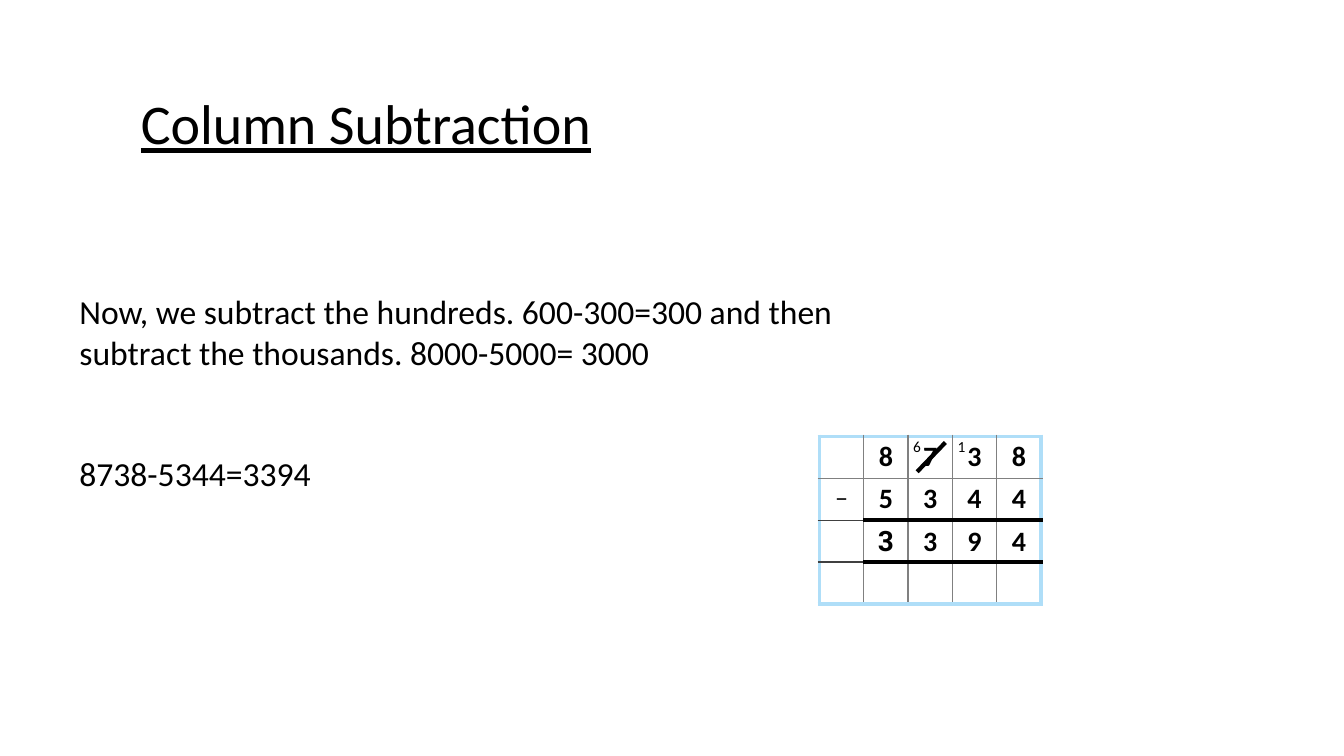
import pptx
import pptx.dml.color
import pptx.enum.shapes
import pptx.enum.text
import pptx.oxml
import pptx.oxml.ns
import pptx.util

PX = 4572  # 200 px to the inch
COLORS = {"ink": "000000", "paper": "FFFFFF", "sky": "AFDEF8",
          "grey": "808080", "dark": "404040"}
COL, ROW = 88, 83
SUM = ["", "8", "7", "3", "8"], ["−", "5", "3", "4", "4"], [""] * 5, [""] * 5
DIGITS = ("3", "Roboto"), ("3", "Calibri"), ("9", "Calibri"), ("4", "Calibri")
CENTER = pptx.enum.text.PP_ALIGN.CENTER


def px(*sizes):
    return [size * PX for size in sizes]


def color(name):
    return pptx.dml.color.RGBColor.from_string(COLORS[name])


def style(par, size, bold=False, face="Calibri", align=CENTER):
    par.alignment = align
    par.font.size = pptx.util.Pt(size)
    par.font.bold = bold
    par.font.name = face
    par.font.color.rgb = color("ink")


def add_text(slide, box, lines, size, gap=0, **look):
    frame = slide.shapes.add_textbox(*px(*box)).text_frame
    frame.word_wrap = True
    frame.text = "\n".join(lines)
    for par in frame.paragraphs:
        style(par, size, **look)
    for par in frame.paragraphs[1:]:
        par.space_before = pptx.util.Pt(gap)


def add_title(slide, box):
    title = slide.shapes.title
    title.left, title.top, title.width, title.height = px(*box)
    frame = title.text_frame
    frame.margin_left = frame.margin_right = 0
    frame.margin_top = frame.margin_bottom = 0
    frame.vertical_anchor = pptx.enum.text.MSO_ANCHOR.TOP
    frame.auto_size = pptx.enum.text.MSO_AUTO_SIZE.NONE
    frame.text = "Column Subtraction"
    style(frame.paragraphs[0], 40)
    frame.paragraphs[0].font.underline = True


def rule_across(edge, col):
    """Colour and points of the horizontal edge, counted from the top."""
    if edge in (0, len(SUM)):
        return "sky", 3
    if edge == 1:
        return "grey", 1
    return ("black" and "ink", 3) if col else ("dark", 1)


def rule_down(edge):
    return ("sky", 3) if edge in (0, len(SUM[0])) else ("grey", 1)


def add_edge(cell, side, rule):
    name, points = rule
    cell.get_or_add_tcPr().append(pptx.oxml.parse_xml(
        f'<a:ln{side} {pptx.oxml.ns.nsdecls("a")} w="{points * 12700}">'
        f'<a:solidFill><a:srgbClr val="{COLORS[name]}"/></a:solidFill>'
        f'</a:ln{side}>'))


def add_grid(slide, box):
    table = slide.shapes.add_table(len(SUM), len(SUM[0]), *px(*box)).table
    table.first_row = table.horz_banding = False
    for col in table.columns:
        col.width = COL * PX
    for r, row in enumerate(SUM):
        table.rows[r].height = ROW * PX
        for c, digit in enumerate(row):
            cell = table.cell(r, c)
            cell.margin_left = cell.margin_right = 0
            cell.margin_top = cell.margin_bottom = 0
            cell.vertical_anchor = pptx.enum.text.MSO_ANCHOR.MIDDLE
            add_edge(cell._tc, "L", rule_down(c))
            add_edge(cell._tc, "R", rule_down(c + 1))
            add_edge(cell._tc, "T", rule_across(r, c))
            add_edge(cell._tc, "B", rule_across(r + 1, c))
            cell.fill.solid()
            cell.fill.fore_color.rgb = color("paper")
            cell.text = digit
            sign = digit == "−"
            style(cell.text_frame.paragraphs[0], 18 if sign else 20, not sign)


def add_strike(slide, box):
    """Cross out a digit from lower left to upper right."""
    left, top, width, height = box
    line = slide.shapes.add_connector(
        pptx.enum.shapes.MSO_CONNECTOR.STRAIGHT,
        *px(left, top + height, left + width, top))
    line.line.color.rgb = color("ink")
    line.line.width = pptx.util.Pt(3)
    line._element.spPr.append(pptx.oxml.parse_xml(
        f'<a:effectLst {pptx.oxml.ns.nsdecls("a")}/>'))


def add_work(slide, box):
    """Place the grid with its answer, carries and crossed-out digit."""
    left, top = box[:2]
    add_grid(slide, box)
    add_strike(slide, (left + 2 * COL + 18, top + 12, 56, 58))
    for col, carry in ((2, "6"), (3, "1")):
        add_text(slide, (left + col * COL - 26, top - 8, COL, 58), [carry], 11)
    for col, (digit, face) in enumerate(DIGITS, 1):
        add_text(slide, (left + col * COL, top + 2 * ROW - 3, COL, 88),
                 [digit], 20, bold=True, face=face)


def main():
    deck = pptx.Presentation()
    deck.slide_width, deck.slide_height = px(2667, 1500)
    slide = deck.slides.add_slide(deck.slide_layouts.get_by_name("Title Only"))
    add_title(slide, (0, 176, 1452, 134))
    add_text(slide, (138, 568, 1688, 504),
             ["Now, we subtract the hundreds. 600-300=300 and then "
              "subtract the thousands. 8000-5000= 3000",
              "8738-5344=3394"],
             24, gap=58, align=pptx.enum.text.PP_ALIGN.LEFT)
    add_work(slide, (1626, 866, 5 * COL, 4 * ROW))
    deck.save("out.pptx")


if __name__ == "__main__":
    main()
